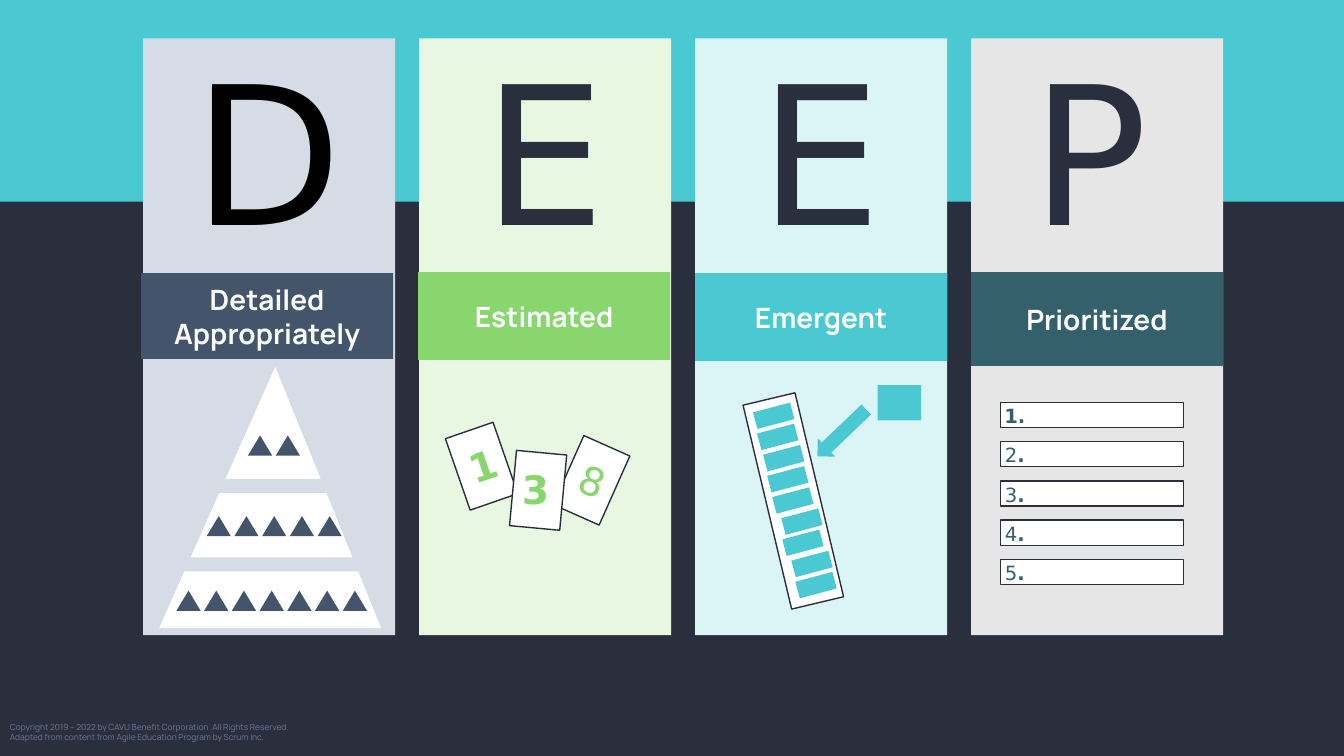
import pptx
import pptx.util
import pptx.dml.color
import pptx.enum.shapes
import pptx.enum.text

MSO = pptx.enum.shapes.MSO_SHAPE
ALIGN = pptx.enum.text.PP_ALIGN
ANCHOR = pptx.enum.text.MSO_ANCHOR
Inches = pptx.util.Inches

THEME = {
    "navy": "2A2F3D", "teal": "4BC9D3", "slate": "44546A", "green": "89D56E",
    "pine": "33606B", "white": "FFFFFF", "band text": "FAFBFD", "black": "000000",
    "muted": "6E7A9B", "pale slate": "D6DCE5", "pale green": "E7F7E2",
    "pale teal": "DBF4F6", "pale grey": "E6E6E6",
    "letter": 138, "band": 20, "card": 28, "rank": 14, "footer": 6,
    "head font": "Manrope", "glyph font": "DejaVu Sans",
}
W, H = 13.33, 7.5
COLUMN_W, PITCH = 2.5, 2.737
COLUMNS = [1.42 + i * PITCH for i in range(4)]


def rgb(name):
    return pptx.dml.color.RGBColor.from_string(THEME[name])


def add(kind, x, y, w, h, fill=None, line=None, rot=0, text=None, size=None,
        color=None, font="glyph font", align=ALIGN.CENTER, inset=(0.06, 0.06)):
    """Add a shape, or a text box if kind is None; text is a list of lines of (text, bold) runs."""
    box = [Inches(v) for v in (x, y, w, h)]
    sp = s.shapes.add_textbox(*box) if kind is None else s.shapes.add_shape(kind, *box)
    sp.rotation = rot
    if kind is not None:
        sp.shadow.inherit = False
        sp.fill.solid()
        sp.fill.fore_color.rgb = rgb(fill)
        if line:
            sp.line.color.rgb = rgb(line)
            sp.line.width = pptx.util.Pt(1)
        else:
            sp.line.fill.background()
    tf = sp.text_frame
    frame = {"word_wrap": True, "vertical_anchor": ANCHOR.MIDDLE,
             "margin_left": Inches(inset[0]), "margin_right": Inches(inset[0]),
             "margin_top": Inches(inset[1]), "margin_bottom": Inches(inset[1])}
    for key, value in frame.items():
        setattr(tf, key, value)
    for i, runs in enumerate(text or []):
        p = tf.paragraphs[0] if i == 0 else tf.add_paragraph()
        p.alignment = align
        for words, bold in runs:
            r = p.add_run()
            r.text = words
            style = {"size": pptx.util.Pt(THEME[size]), "name": THEME[font], "bold": bold}
            for key, value in style.items():
                setattr(r.font, key, value)
            r.font.color.rgb = rgb(color)
    return sp


prs = pptx.Presentation()
prs.slide_width, prs.slide_height = Inches(W), Inches(H)
s = prs.slides.add_slide(prs.slide_layouts[6])

# Backdrop and footer
s.background.fill.solid()
s.background.fill.fore_color.rgb = rgb("navy")
add(MSO.RECTANGLE, 0, 0, W, 2, "teal")
add(None, 0, 7.11, 4.5, 0.3, size="footer", color="muted", font="head font",
    align=ALIGN.LEFT, inset=(0.1, 0.05), text=[
        [("Copyright 2019 – 2022 by CAVU Benefit Corporation .All Rights Reserved.", False)],
        [("Adapted from content from Agile Education Program by Scrum Inc.", False)]])

# Columns: panel, big letter, title band
# letter, letter colour, letter offset, panel, band, band offset, band top, band height, title
columns = [
    ("D", "black", 0.4, "pale slate", "slate", -0.02, 2.71, 0.85, ["Detailed", "Appropriately"]),
    ("E", "navy", 0.4, "pale green", "green", -0.01, 2.7, 0.87, ["Estimated"]),
    ("E", "navy", 0.4, "pale teal", "teal", 0, 2.71, 0.87, ["Emergent"]),
    ("P", "navy", 0.34, "pale grey", "pine", 0, 2.7, 0.93, ["Prioritized"]),
]
for x, (letter, ink, dx, panel, band, band_dx, top, height, title) in zip(COLUMNS, columns):
    add(MSO.RECTANGLE, x, 0.38, COLUMN_W, 5.92, panel)
    add(None, x + dx, 0.68, 1.68, 1.58, text=[[(letter, False)]], size="letter", color=ink)
    add(MSO.RECTANGLE, x + band_dx, top, COLUMN_W, height, band,
        text=[[(words, True)] for words in title],
        size="band", color="band text", font="head font")

detailed, estimated, emergent, prioritized = COLUMNS

# Detailed: pyramid cut into tiers, with more items towards the base
pyramid = add(MSO.ISOSCELES_TRIANGLE, detailed + 0.16, 3.64, 2.2, 2.59, "white")
pyramid.adjustments[0] = 0.523
for count, dx, y in [(2, 1.04, 4.32), (5, 0.63, 5.12), (7, 0.33, 5.86)]:
    for i in range(count):
        add(MSO.ISOSCELES_TRIANGLE, detailed + dx + i * 0.275, y, 0.24, 0.2, "slate")
for dx, y in [(0.3, 4.75), (0.23, 5.53)]:
    add(MSO.RECTANGLE, detailed + dx, y, 2.14, 0.14, "pale slate")

# Estimated: three cards, then their numbers
for dx, y, rot in [(0.37, 4.25, 340.9), (1.46, 4.39, 24), (0.93, 4.49, 5.3)]:
    add(MSO.RECTANGLE, estimated + dx, y, 0.5, 0.75, "white", "navy", rot)
for number, bold, dx, y, w, rot in [("3", True, 0.93, 4.62, 0.45, 0),
                                    ("1", True, 0.41, 4.39, 0.44, 340.9),
                                    ("8", False, 1.47, 4.54, 0.5, 21.8)]:
    add(None, estimated + dx, y, w, 0.45, rot=rot,
        text=[[(number, bold)]], size="card", color="green")

# Emergent: leaning stack of items, with a new one going in
add(MSO.RECTANGLE, emergent + 0.71, 3.93, 0.53, 2.08, "white", "navy", 346.6)
for i, dx in enumerate([0.59, 0.63, 0.69, 0.73, 0.78, 0.87, 0.88, 0.97, 1.01]):
    add(MSO.RECTANGLE, emergent + dx, 4.04 + i * 0.21, 0.38, 0.17, "teal", rot=345.1)
arrow = add(MSO.DOWN_ARROW, emergent + 1.33, 3.96, 0.25, 0.67, "teal", rot=46.3)
arrow.adjustments[0], arrow.adjustments[1] = 0.549, 0.5
add(MSO.RECTANGLE, emergent + 1.81, 3.82, 0.43, 0.35, "teal")

# Prioritized: ranked list
for i in range(5):
    add(MSO.RECTANGLE, prioritized + 0.29, 3.99 + i * 0.39, 1.82, 0.25, "white", "navy")
    add(None, prioritized + 0.01, 3.96 + i * 0.39, 0.85, 0.33,
        text=[[(str(i + 1), i == 0), (".", True)]], size="rank", color="pine")

prs.save("out.pptx")
